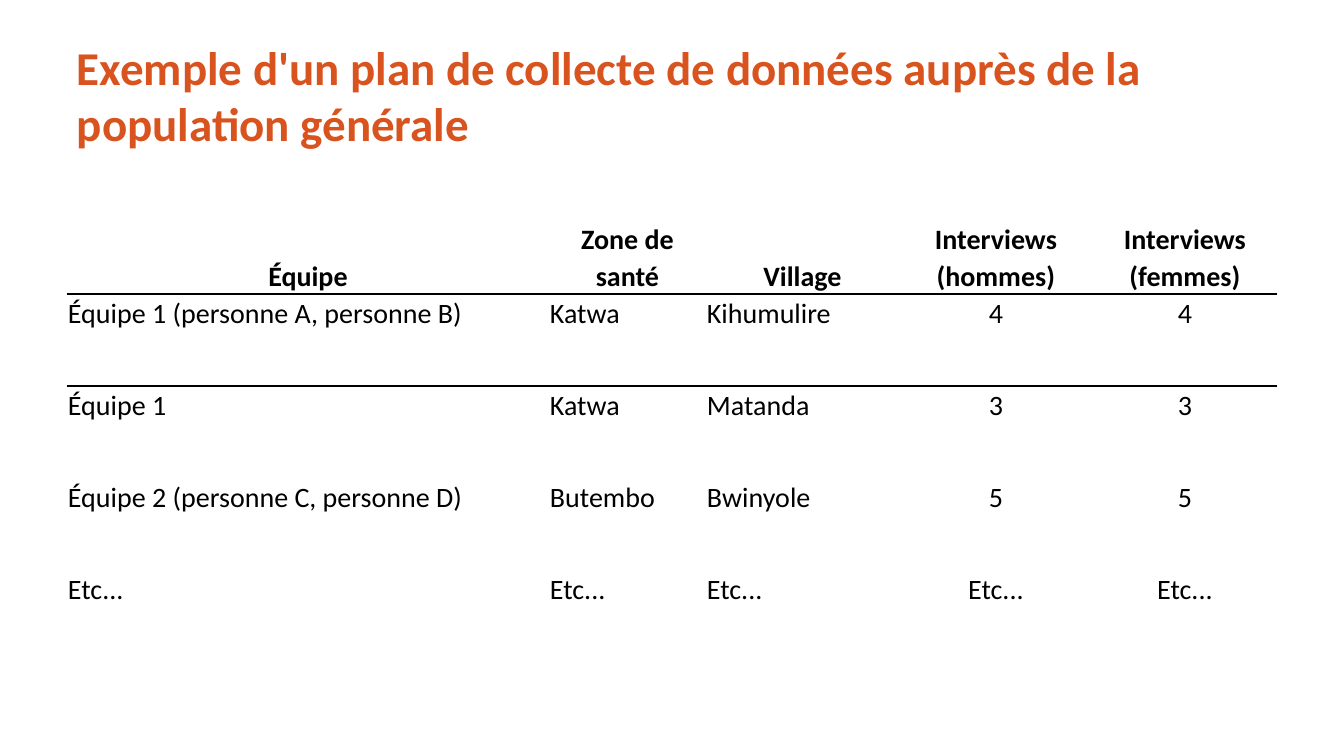
from lxml.etree import SubElement
from pptx import Presentation
from pptx.dml.color import RGBColor
from pptx.enum.text import MSO_ANCHOR, PP_ALIGN
from pptx.oxml.ns import qn
from pptx.util import Pt

TITLE = "Exemple d'un plan de collecte de données auprès de la population générale"
HEADER = ["Équipe", "Zone de santé", "Village", "Interviews (hommes)", "Interviews (femmes)"]
TEAMS = [
    ["Équipe 1 (personne A, personne B)", "Katwa", "Kihumulire", "4", "4"],
    ["Équipe 1", "Katwa", "Matanda", "3", "3"],
    ["Équipe 2 (personne C, personne D)", "Butembo", "Bwinyole", "5", "5"],
    ["Etc...", "Etc...", "Etc...", "Etc...", "Etc..."],
]
COLUMN_WIDTHS = [482, 157, 193, 194, 184]
FIRST_CENTRED_COLUMN = 3
ROW_HEIGHT = 92
LEFT, WIDTH = 67, sum(COLUMN_WIDTHS)
COLORS = {"title": "D9531E", "text": "000000", "rule": "000000"}
FONT = "Calibri"
NO_STYLE = "{2D5ABB26-0587-4C30-8999-92F81FD0307C}"


def px(n):
    return round(n * 914400 / 100.8)


def style_text(p, size, color, bold):
    font = p.runs[0].font
    font.name, font.size, font.bold = FONT, Pt(size), bold
    font.color.rgb = RGBColor.from_string(COLORS[color])


def add_rule(cell, side):
    """Draw a 1 pt border; side is 'a:lnT' or 'a:lnB'."""
    ln = SubElement(cell._tc.get_or_add_tcPr(), qn(side), w=str(Pt(1)))
    fill = SubElement(ln, qn("a:solidFill"))
    SubElement(fill, qn("a:srgbClr"), val=COLORS["rule"])


def add_title(slide):
    box = slide.shapes.add_textbox(px(LEFT), px(30), px(WIDTH), px(126))
    tf = box.text_frame
    tf.word_wrap = True
    tf.vertical_anchor = MSO_ANCHOR.BOTTOM
    tf.text = TITLE
    p = tf.paragraphs[0]
    p.line_spacing = Pt(40)
    style_text(p, 33.6, "title", True)


def fill_cell(cell, text, row, column):
    is_header = row == 0
    cell.margin_left = cell.margin_right = px(1)
    cell.margin_top = cell.margin_bottom = 0
    cell.vertical_anchor = MSO_ANCHOR.BOTTOM if is_header else MSO_ANCHOR.TOP
    cell.text = text
    p = cell.text_frame.paragraphs[0]
    centred = is_header or column >= FIRST_CENTRED_COLUMN
    p.alignment = PP_ALIGN.CENTER if centred else PP_ALIGN.LEFT
    p.line_spacing, p.space_after = 1.07, Pt(8)
    style_text(p, 20, "text", is_header)
    if row < 2:
        add_rule(cell, "a:lnB" if is_header else "a:lnT")
    cell.fill.background()


def add_plan(slide):
    rows = [HEADER] + TEAMS
    frame = slide.shapes.add_table(len(rows), len(HEADER), px(LEFT), px(202),
                                   px(WIDTH), px(ROW_HEIGHT * len(rows)))
    table = frame.table
    table.horz_banding = False
    table._tbl.tblPr.find(qn("a:tableStyleId")).text = NO_STYLE
    for column, width in zip(table.columns, COLUMN_WIDTHS):
        column.width = px(width)
    for r, texts in enumerate(rows):
        table.rows[r].height = px(ROW_HEIGHT)
        for c, text in enumerate(texts):
            fill_cell(table.cell(r, c), text, r, c)


def main():
    prs = Presentation()
    prs.slide_width, prs.slide_height = px(1344), px(756)
    slide = prs.slides.add_slide(prs.slide_layouts[6])
    add_title(slide)
    add_plan(slide)
    prs.save("out.pptx")


if __name__ == "__main__":
    main()
